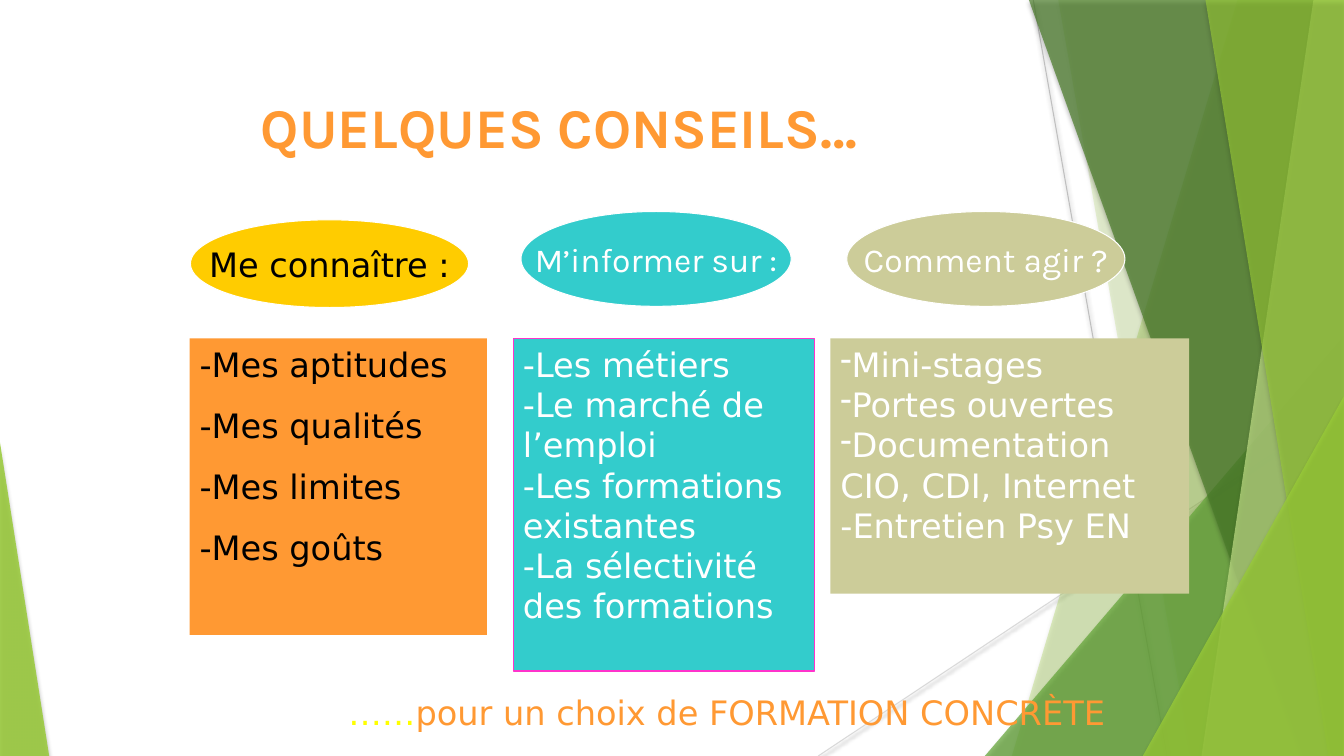
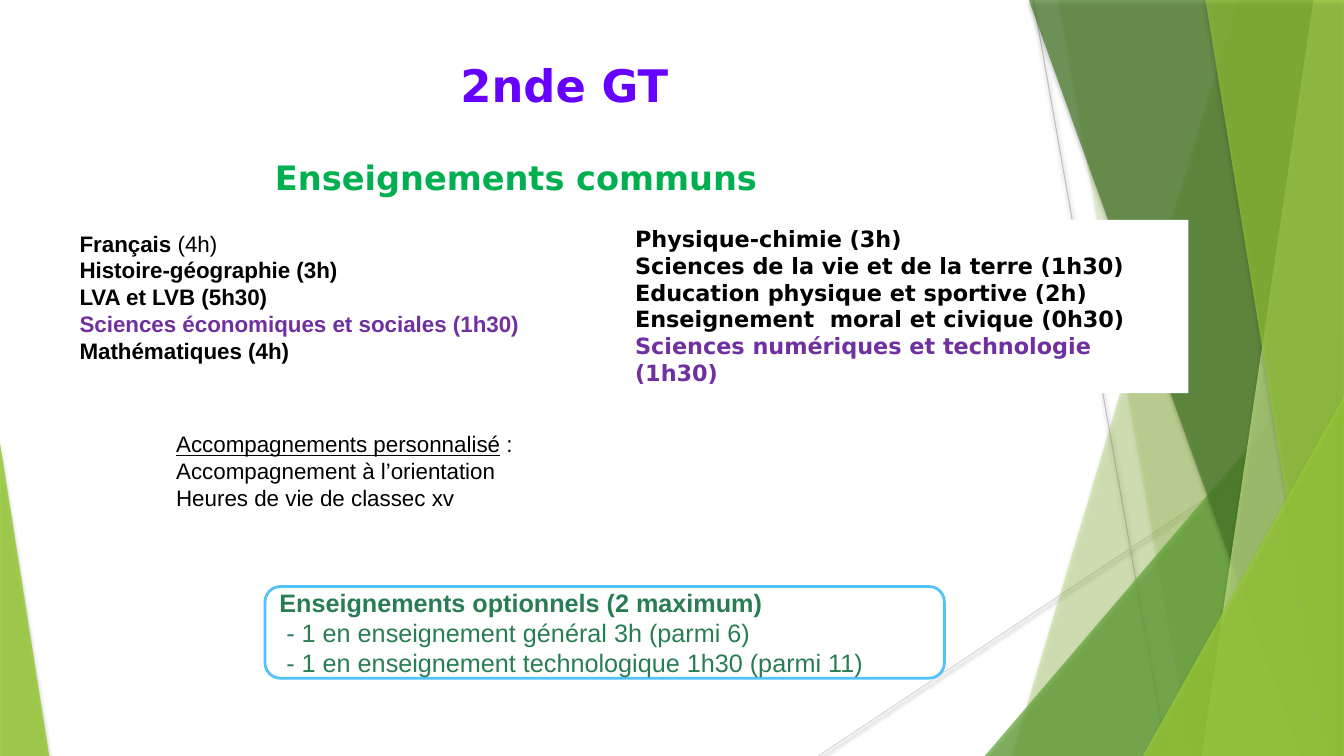
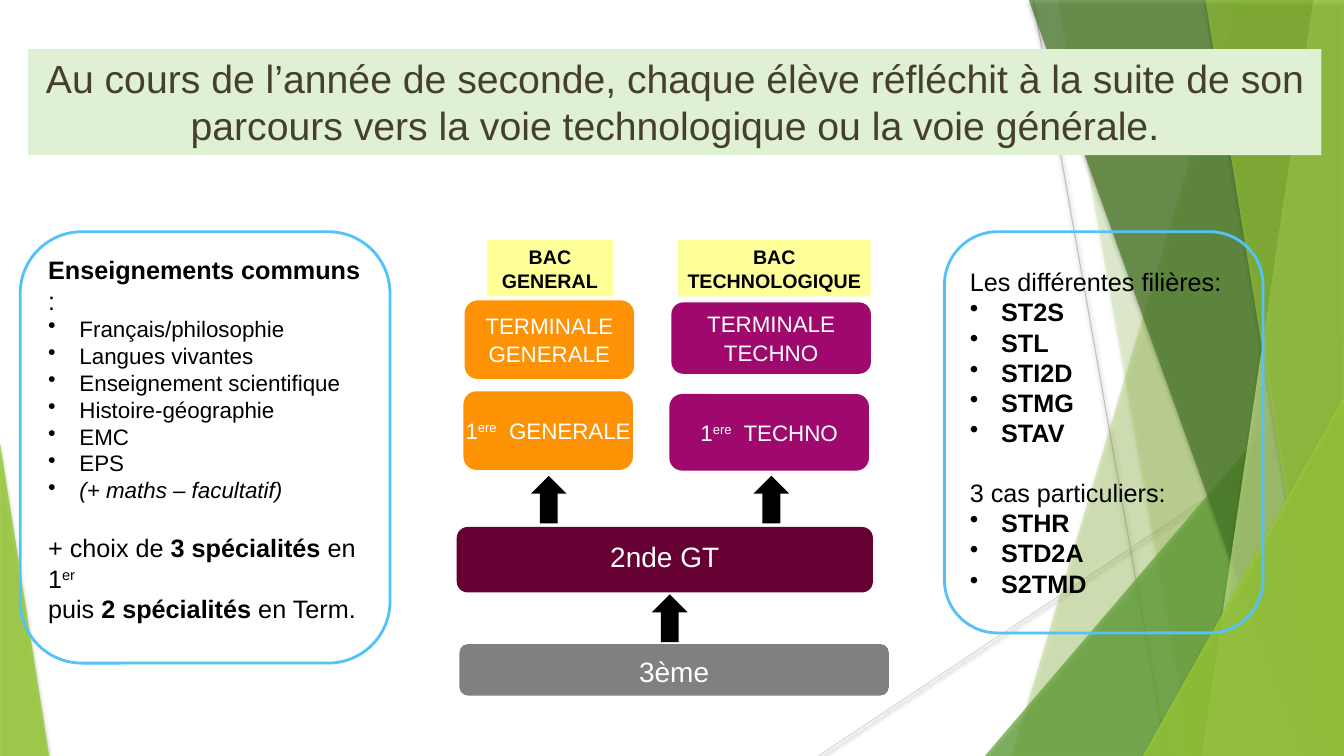
from dataclasses import dataclass, replace

from lxml.etree import SubElement
from pptx import Presentation
from pptx.dml.color import RGBColor
from pptx.enum.shapes import MSO_CONNECTOR as Link, MSO_SHAPE as Form
from pptx.enum.text import MSO_ANCHOR as Anchor, MSO_AUTO_SIZE as Fit, PP_ALIGN as Align
from pptx.oxml.ns import qn
from pptx.util import Cm, Pt

WIDTH, HEIGHT = 33.87, 19.05


@dataclass(frozen=True)
class Theme:
    sans: str = "Arial"
    wide: str = "DejaVu Sans"
    display: str = "Karla"
    black: str = "000000"
    white: str = "FFFFFF"
    orange: str = "FF9933"
    gold: str = "FFCC00"
    yellow: str = "FFFF00"
    turquoise: str = "33CCCC"
    pink: str = "FF33CC"
    khaki: str = "CCCC99"
    violet: str = "6600FF"
    purple: str = "7030A0"
    green: str = "00B050"
    forest: str = "297D53"
    sky: str = "51C3F9"
    mint: str = "DFF0D4"
    brown: str = "454027"
    general: str = "FC9204"
    techno: str = "9F096D"
    seconde: str = "660033"
    gray: str = "808080"
    tag: str = "FFFF99"
    leaf: str = "99CB38"
    meadow: str = "63A537"
    moss: str = "4A7C29"
    lime: str = "C2E088"
    silver: str = "BFBFBF"
    mist: str = "D9D9D9"
    title: int = 40
    heading: int = 32
    banner: int = 28
    large: int = 24
    level: int = 20
    text: int = 18
    small: int = 16
    label: int = 14


THEME = Theme()


@dataclass(frozen=True)
class Style:
    size: int
    font: str = THEME.sans
    color: str = THEME.black
    bold: bool = False
    italic: bool = False
    align: Align = Align.LEFT
    before: float = 0
    spacing: float = 1
    bullet: str = ""
    margin: float = 0
    hanging: float = 0


@dataclass(frozen=True)
class Span:
    text: str
    bold: bool | None = None
    underline: bool | None = None
    color: str = ""
    raised: bool = False


class Line:
    """A paragraph whose style or spans differ from its neighbours."""

    def __init__(self, style, *spans):
        self.style = style
        self.spans = [Span(item) if isinstance(item, str) else item for item in spans]


def rgb(color):
    return RGBColor.from_string(color)


def set_bullet(para, style):
    props = para._p.get_or_add_pPr()
    props.set("marL", str(Cm(style.margin)))
    props.set("indent", str(Cm(-style.hanging)))
    if style.bullet:
        SubElement(props, qn("a:buChar"), char=style.bullet)
    else:
        SubElement(props, qn("a:buNone"))


def write_line(para, line):
    style = line.style
    set_bullet(para, style)
    para.alignment = style.align
    para.space_before = Pt(style.before)
    para.line_spacing = style.spacing
    font = para.font
    font.name, font.size = style.font, Pt(style.size)
    font.bold, font.italic = style.bold, style.italic
    font.color.rgb = rgb(style.color)
    for span in line.spans:
        run = para.add_run()
        run.text = span.text
        if span.bold is not None:
            run.font.bold = span.bold
        if span.underline is not None:
            run.font.underline = span.underline
        if span.color:
            run.font.color.rgb = rgb(span.color)
        if span.raised:
            run.font._element.set("baseline", "30000")


def write(shape, lines, style, anchor=Anchor.TOP, wrap=True):
    frame = shape.text_frame
    frame.auto_size = Fit.NONE
    frame.word_wrap = wrap
    frame.vertical_anchor = anchor
    for index, line in enumerate(lines):
        para = frame.paragraphs[0] if index == 0 else frame.add_paragraph()
        write_line(para, line if isinstance(line, Line) else Line(style, line))


def paint(shape, fill=None, line=None, width=0.75):
    shape.shadow.inherit = False
    if fill:
        shape.fill.solid()
        shape.fill.fore_color.rgb = rgb(fill)
    else:
        shape.fill.background()
    if line:
        shape.line.color.rgb = rgb(line)
        shape.line.width = Pt(width)
    else:
        shape.line.fill.background()


def add_box(page, form, place, fill=None, line=None, width=0.75):
    box = page.shapes.add_shape(form, *map(Cm, place))
    paint(box, fill, line, width)
    return box


def fill_placeholder(holder, place, lines, style, anchor=Anchor.TOP, fill=None):
    holder.left, holder.top, holder.width, holder.height = map(Cm, place)
    if fill:
        holder.fill.solid()
        holder.fill.fore_color.rgb = rgb(fill)
    write(holder, lines, style, anchor)


def cast_shadow(element, alpha, blur, distance):
    props = element.spPr
    effects = props.find(qn("a:effectLst"))
    if effects is None:
        effects = SubElement(props, qn("a:effectLst"))
    shadow = SubElement(effects, qn("a:outerShdw"), blurRad=str(Pt(blur)), dist=str(Pt(distance)),
                        dir="5400000", algn="tl", rotWithShape="0")
    color = SubElement(shadow, qn("a:srgbClr"), val=THEME.black)
    SubElement(color, qn("a:alpha"), val=str(alpha * 1000))


def add_ray(page, start, end, color):
    ray = page.shapes.add_connector(Link.STRAIGHT, *map(Cm, start + end))
    ray.line.color.rgb = rgb(color)
    ray.line.width = Pt(0.75)
    cast_shadow(ray.element, 38, 3.1, 1.6)
    return ray


def finish_pane(pane, color, opacity):
    paint(pane, color)
    tint = pane.element.spPr.find(qn("a:solidFill")).find(qn("a:srgbClr"))
    SubElement(tint, qn("a:alpha"), val=str(opacity * 1000))
    cast_shadow(pane.element, 35, 3, 2)
    return pane


def add_band(page, top_left, bottom_left, color, opacity):
    """A full-height pane from a slanted left edge to the right edge of the slide."""
    builder = page.shapes.build_freeform(Cm(top_left), Cm(0), scale=1.0)
    corners = [(WIDTH, 0), (WIDTH, HEIGHT), (bottom_left, HEIGHT)]
    builder.add_line_segments([(Cm(x), Cm(y)) for x, y in corners], close=True)
    return finish_pane(builder.convert_to_shape(), color, opacity)


def add_corner(page, left, top, width, apex, color, opacity):
    """A right triangle standing on the bottom edge of the slide."""
    place = (left, top, width, HEIGHT - top)
    corner = page.shapes.add_shape(Form.ISOSCELES_TRIANGLE, *map(Cm, place))
    corner.adjustments[0] = apex
    return finish_pane(corner, color, opacity)


def decorate_master(deck, page):
    """Draw the green facets on a page and move them behind everything on the master."""
    facets = [
        add_ray(page, (26.04, 0), (29.41, HEIGHT), THEME.silver),
        add_ray(page, (WIDTH, 10.24), (20.62, HEIGHT), THEME.mist),
        add_band(page, 31.19, 25.5, THEME.leaf, 30),
        add_band(page, 26.67, 30.02, THEME.leaf, 20),
        add_corner(page, 24.82, 8.46, 9.05, 1, THEME.meadow, 72),
        add_band(page, 25.93, 32.79, THEME.moss, 70),
        add_band(page, 33.1, 30.28, THEME.lime, 70),
        add_band(page, 30.38, 33.48, THEME.leaf, 65),
        add_corner(page, 28.8, 9.98, 5.07, 1, THEME.leaf, 80),
        add_corner(page, 0, 11.15, 1.24, 0, THEME.leaf, 85),
    ]
    tree = deck.slide_master.element.cSld.spTree
    for index, facet in enumerate(facets, start=2):
        tree.insert(index, facet.element)


def build_advice(page):
    title = Style(THEME.title, THEME.display, THEME.orange, bold=True)
    fill_placeholder(page.shapes.title, (6.32, 0.53, 21.59, 3.63),
                     ["QUELQUES CONSEILS…"], title, Anchor.BOTTOM)

    dark = Style(THEME.large, THEME.wide)
    light = replace(dark, color=THEME.white)
    ovals = [
        ("Me connaître :", (4.8, 5.54, 7.01, 2.21), THEME.gold, dark),
        ("M’informer sur :", (13.13, 5.33, 6.81, 2.39), THEME.turquoise,
         replace(light, font=THEME.display)),
        ("Comment agir ?", (21.34, 5.33, 7.01, 2.39), THEME.khaki,
         replace(light, font=THEME.display)),
    ]
    for text, place, fill, style in ovals:
        oval = add_box(page, Form.OVAL, place, fill, THEME.white)
        write(oval, [text], replace(style, align=Align.CENTER), Anchor.MIDDLE, wrap=False)

    dashed = replace(light, bullet="-", hanging=0.61)
    columns = [
        ((4.78, 7.49, 7.47), THEME.orange, None, replace(dark, before=15),
         ["-Mes aptitudes", "-Mes qualités", "-Mes limites", "-Mes goûts"]),
        ((12.93, 7.59, 8.38), THEME.turquoise, THEME.pink, light,
         ["-Les métiers", "-Le marché de l’emploi", "-Les formations", "existantes",
          "-La sélectivité", "des formations"]),
        ((20.93, 9.04, 6.43), THEME.khaki, None, dashed,
         ["Mini-stages", "Portes ouvertes", "Documentation CIO, CDI, Internet",
          Line(light, "-Entretien Psy EN")]),
    ]
    for (left, width, height), fill, line, style, lines in columns:
        column = add_box(page, Form.RECTANGLE, (left, 8.53, width, height), fill, line)
        write(column, lines, style)

    closing = page.shapes.add_textbox(*map(Cm, (8.53, 17.32, 20.09, 1.27)))
    style = replace(dark, color=THEME.orange)
    write(closing, [Line(style, Span("……", color=THEME.yellow),
                         "pour un choix de FORMATION CONCRÈTE")], style)


def build_seconde(page):
    heading = Style(THEME.heading, THEME.wide, THEME.violet, bold=True)
    fill_placeholder(page.shapes.title, (11.35, 1.32, 16.81, 1.63), ["2nde GT"], heading)

    subject = Style(THEME.small, bold=True)
    wide_subject = replace(subject, font=THEME.wide)
    left, right = page.placeholders[1], page.placeholders[2]
    fill_placeholder(left, (1.75, 5.66, 12.8, 4.29), [
        Line(subject, "Français", Span(" (4h)", bold=False)),
        "Histoire-géographie (3h)",
        "LVA et LVB (5h30)",
        Line(replace(subject, color=THEME.purple), "Sciences économiques et sociales (1h30)"),
        "Mathématiques (4h)",
    ], subject, fill=THEME.white)
    fill_placeholder(right, (15.75, 5.54, 14.2, 4.37), [
        "Physique-chimie (3h)",
        "Sciences de la vie et de la terre (1h30)",
        "Education physique et sportive (2h)",
        "Enseignement  moral et civique (0h30)",
        Line(replace(wide_subject, color=THEME.purple),
             "Sciences numériques et technologie (1h30)"),
    ], wide_subject, fill=THEME.white)

    common = add_box(page, Form.RECTANGLE, (6.68, 3.84, 13.08, 1.3), THEME.white)
    write(common, ["Enseignements communs"],
          Style(THEME.large, THEME.wide, THEME.green, bold=True))

    plain = Style(THEME.small)
    support = add_box(page, Form.RECTANGLE, (4.19, 10.72, 22.63, 2.31), THEME.white)
    write(support, [
        Line(plain, Span("Accompagnements personnalisé", underline=True), " :"),
        "Accompagnement à l’orientation",
        "Heures de vie de classec xv",
    ], plain)

    option = Style(THEME.text, color=THEME.forest)
    options = add_box(page, Form.FLOWCHART_ALTERNATE_PROCESS, (6.68, 14.78, 17.12, 2.31),
                      THEME.white, THEME.sky, 2)
    write(options, [
        Line(replace(option, bold=True), "Enseignements optionnels (2 maximum)"),
        " - 1 en enseignement général 3h (parmi 6)",
        " - 1 en enseignement technologique 1h30 (parmi 11)",
    ], option, Anchor.MIDDLE)


def add_panel(page, place, lines, style, anchor=Anchor.TOP):
    panel = add_box(page, Form.ROUNDED_RECTANGLE, place, line=THEME.sky, width=2)
    write(panel, lines, style, anchor)


def build_pathways(page):
    banner = Style(THEME.banner, color=THEME.brown, align=Align.CENTER)
    fill_placeholder(page.shapes.title, (0.71, 1.24, 32.59, 2.67), [
        "Au cours de l’année de seconde, chaque élève réfléchit à la suite de son "
        "parcours vers la voie technologique ou la voie générale.",
    ], banner, fill=THEME.mint)

    body = Style(THEME.text)
    after_gap = replace(body, before=21)
    course = Style(THEME.small, bullet="•", margin=0.79, hanging=0.79)
    add_panel(page, (0.51, 5.84, 9.32, 10.87), [
        Line(body, Span("Enseignements communs ", bold=True), ":"),
        "Français/philosophie", "Langues vivantes", "Enseignement scientifique",
        "Histoire-géographie", "EMC", "EPS",
        Line(replace(course, italic=True), "(+ maths – facultatif)"),
        Line(after_gap, "+ choix de ", Span("3 spécialités ", bold=True), "en 1",
             Span("er", raised=True)),
        Line(body, "puis ", Span("2 spécialités ", bold=True), "en Term."),
    ], course)
    add_panel(page, (23.8, 5.84, 8.03, 10.11), [
        Line(body, "Les différentes filières:"),
        "ST2S", "STL", "STI2D", "STMG", "STAV",
        Line(after_gap, "3 cas particuliers:"),
        "STHR", "STD2A", "S2TMD",
    ], replace(course, size=THEME.text, bold=True), Anchor.MIDDLE)

    step = Style(THEME.small, color=THEME.white, align=Align.CENTER)
    level = replace(step, size=THEME.level)
    second_line = replace(step, spacing=1.05)
    ere = Span("ere", raised=True)
    steps = [
        ((11.51, 13.28, 10.49, 1.65), THEME.seconde, [Line(replace(level, spacing=0.8), "2nde GT")]),
        ((11.68, 9.86, 4.27, 1.98), THEME.general, [Line(step, "1", ere, "  GENERALE")]),
        ((16.87, 9.93, 5.03, 1.93), THEME.techno, [Line(step, "1", ere, "  TECHNO")]),
        ((11.71, 7.57, 4.27, 1.98), THEME.general, ["TERMINALE", Line(second_line, "GENERALE")]),
        ((16.92, 7.62, 5.03, 1.8), THEME.techno, ["TERMINALE", Line(second_line, "TECHNO")]),
        ((11.58, 16.23, 10.82, 1.3), THEME.gray, [Line(replace(level, spacing=1.1), "3ème")]),
    ]
    for place, fill, lines in steps:
        box = add_box(page, Form.ROUNDED_RECTANGLE, place, fill)
        write(box, lines, step, Anchor.MIDDLE, wrap=False)

    for left, top in [(16.43, 14.98), (13.38, 11.99), (18.99, 11.99)]:
        add_box(page, Form.UP_ARROW, (left, top, 0.9, 1.2), THEME.black)

    diploma = Style(THEME.label, bold=True, align=Align.CENTER)
    for name, left, width in [("GENERAL", 12.27, 3.18), ("TECHNOLOGIQUE", 17.09, 4.85)]:
        label = add_box(page, Form.RECTANGLE, (left, 6.05, width, 1.42), THEME.tag)
        write(label, ["BAC", name], diploma, wrap=False)


def main():
    deck = Presentation()
    deck.slide_width, deck.slide_height = Cm(WIDTH), Cm(HEIGHT)
    title_only, two_content = deck.slide_layouts[5], deck.slide_layouts[3]
    advice, seconde, pathways = map(deck.slides.add_slide, (title_only, two_content, title_only))
    decorate_master(deck, advice)
    build_advice(advice)
    build_seconde(seconde)
    build_pathways(pathways)
    deck.save("out.pptx")


if __name__ == "__main__":
    main()
